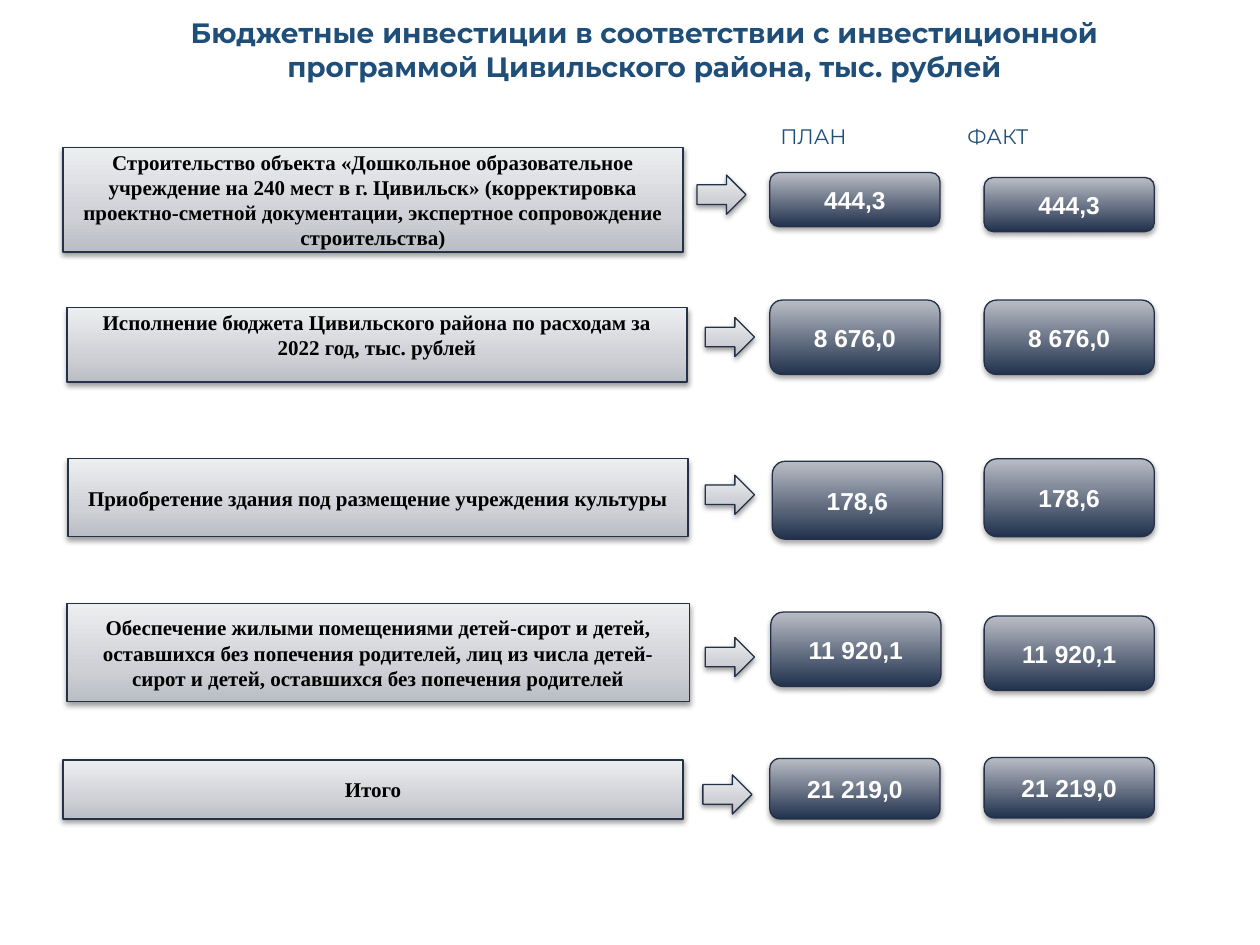
from lxml import etree
from pptx import Presentation
from pptx.dml.color import RGBColor
from pptx.enum.shapes import MSO_SHAPE
from pptx.enum.text import MSO_ANCHOR, PP_ALIGN
from pptx.oxml import parse_xml
from pptx.util import Cm, Pt

RECT = MSO_SHAPE.RECTANGLE
PILL = MSO_SHAPE.ROUNDED_RECTANGLE
ARROW = MSO_SHAPE.RIGHT_ARROW
TOP, MIDDLE = MSO_ANCHOR.TOP, MSO_ANCHOR.MIDDLE
CENTER = PP_ALIGN.CENTER
NS = "http://schemas.openxmlformats.org/drawingml/2006/main"

COLORS = {"title": "1F4E79", "line": "243147", "label": "000000", "value": "FFFFFF"}
SILVER = {"stops": [(0, "BABDC4"), (35, "CFD1D6"), (100, "EDEEF0")], "alpha": 38, "dist": 1.6}
NAVY = {"stops": [(0, "21314D"), (100, "B9BDC5")], "alpha": 35, "dist": 1.8}

TITLE = "Бюджетные инвестиции в соответствии с инвестиционной программой Цивильского района, тыс. рублей"
HEADINGS = [("ПЛАН", 16.4), ("ФАКТ", 20.12)]

# label, (left, top, width, height), arrow (left, top), plan (left, top), fact top, value height, plan, fact
ROWS = [
    ("Строительство объекта «Дошкольное образовательное учреждение на 240 мест в г. Цивильск» "
     "(корректировка проектно-сметной документации, экспертное сопровождение строительства)",
     (1.27, 2.97, 12.5, 2.11), (14.05, 3.53), (15.52, 3.48), 3.58, 1.09, "444,3", "444,3"),
    ("Исполнение бюджета Цивильского района по расходам за 2022 год, тыс. рублей",
     (1.35, 6.2, 12.5, 1.5), (14.22, 6.4), (15.52, 6.05), 6.05, 1.5, "8 676,0", "8 676,0"),
    ("Приобретение здания под размещение учреждения культуры",
     (1.37, 9.25, 12.5, 1.57), (14.22, 9.58), (15.57, 9.3), 9.25, 1.57, "178,6", "178,6"),
    ("Обеспечение жилыми помещениями детей-сирот и детей, оставшихся без попечения родителей, "
     "лиц из числа детей-сирот и детей, оставшихся без попечения родителей",
     (1.35, 12.17, 12.55, 1.98), (14.22, 12.85), (15.54, 12.34), 12.42, 1.5, "11 920,1", "11 920,1"),
    ("Итого",
     (1.27, 15.32, 12.5, 1.19), (14.17, 15.62), (15.52, 15.29), 15.27, 1.22, "21 219,0", "21 219,0"),
]
ARROW_SIZE = (0.99, 0.79)
VALUE_W, FACT_LEFT = 3.43, 19.84
RAISED_ROW = 1


def write(s, text, font, size, color, bold=True, anchor=MIDDLE):
    tf = s.text_frame
    tf.word_wrap = True
    tf.vertical_anchor = anchor
    tf.text = text
    p = tf.paragraphs[0]
    p.alignment = CENTER
    f = p.runs[0].font
    f.name, f.size, f.bold = font, Pt(size), bold
    f.color.rgb = RGBColor.from_string(COLORS[color])
    return tf


def add_text(slide, text, box, size, bold):
    s = slide.shapes.add_textbox(*map(Cm, box))
    tf = write(s, text, "Montserrat", size, "title", bold)
    tf.margin_top = tf.margin_bottom = 0


def add_block(slide, kind, box, style):
    s = slide.shapes.add_shape(kind, *map(Cm, box))
    s.line.color.rgb = RGBColor.from_string(COLORS["line"])
    s.line.width = Pt(0.75)
    s.shadow.inherit = False
    stops = "".join(f'<a:gs pos="{pos * 1000}"><a:srgbClr val="{c}"/></a:gs>' for pos, c in style["stops"])
    fill = parse_xml(f'<a:gradFill xmlns:a="{NS}" rotWithShape="1"><a:gsLst>{stops}</a:gsLst>'
                     '<a:lin ang="16200000" scaled="0"/></a:gradFill>')
    spPr = s._element.spPr
    spPr.find(f"{{{NS}}}prstGeom").addnext(fill)
    effects = spPr.find(f"{{{NS}}}effectLst")
    shadow = etree.SubElement(effects, f"{{{NS}}}outerShdw", blurRad=str(Pt(3.1)),
                              dist=str(Pt(style["dist"])), dir="5400000", rotWithShape="0")
    color = etree.SubElement(shadow, f"{{{NS}}}srgbClr", val="000000")
    etree.SubElement(color, f"{{{NS}}}alpha", val=str(style["alpha"] * 1000))
    return s


prs = Presentation()
prs.slide_width, prs.slide_height = Cm(25.4), Cm(19.05)
slide = prs.slides.add_slide(prs.slide_layouts[6])

add_text(slide, TITLE, (2.39, 0.3, 21.21, 1.4), 16, True)
for text, center in HEADINGS:
    add_text(slide, text, (center - 1.5, 2.45, 3, 0.6), 12, False)

for i, (label, box, arrow, plan_at, fact_top, height, plan, fact) in enumerate(ROWS):
    raised = i == RAISED_ROW
    s = add_block(slide, RECT, box, SILVER)
    tf = write(s, label, "Times New Roman", 12, "label", anchor=TOP if raised else MIDDLE)
    if raised:
        tf.margin_top = Cm(0.04)
    add_block(slide, ARROW, arrow + ARROW_SIZE, SILVER)
    for value, at in ((plan, plan_at), (fact, (FACT_LEFT, fact_top))):
        s = add_block(slide, PILL, at + (VALUE_W, height), NAVY)
        write(s, value, "Arial", 14, "value")

prs.save("out.pptx")
